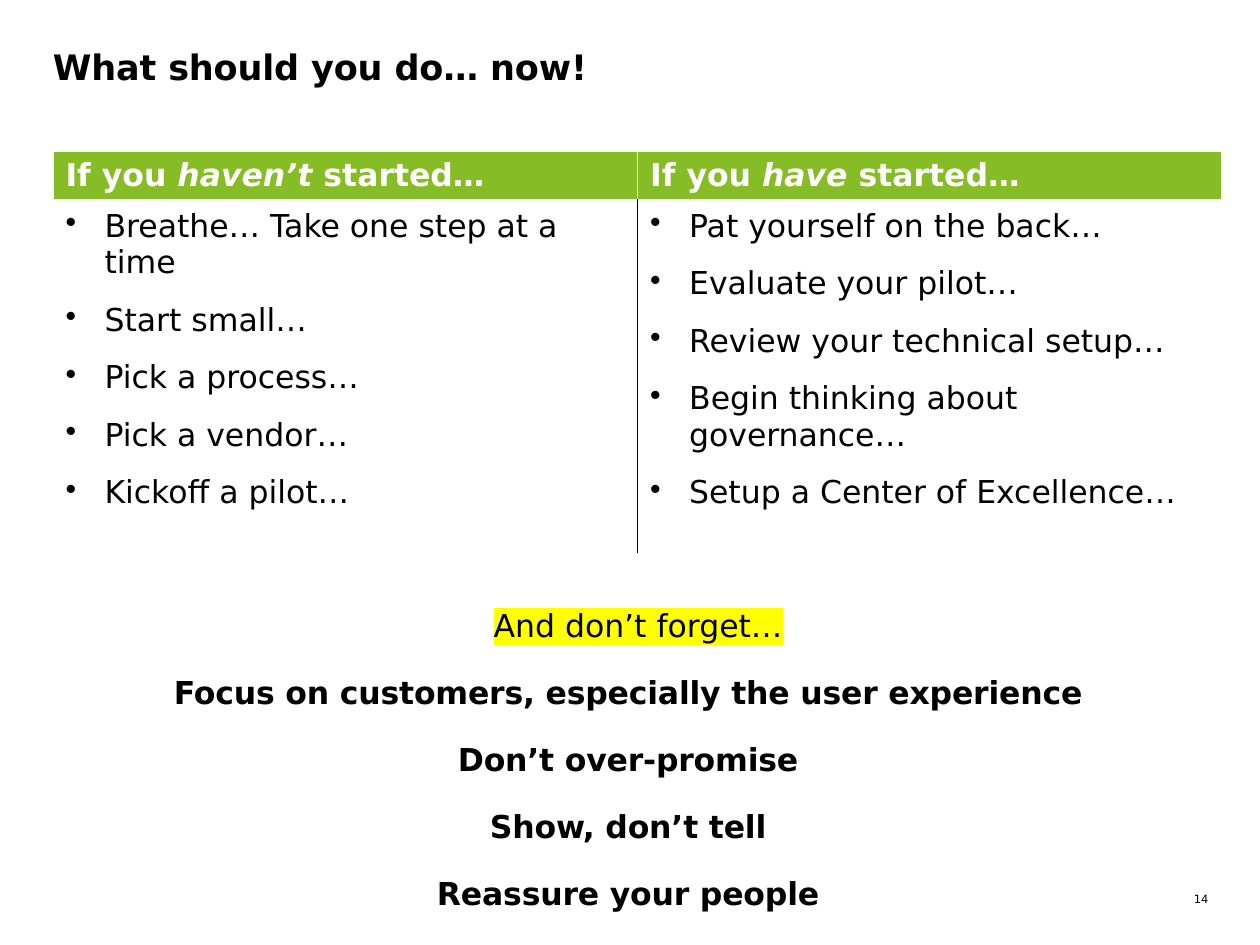
from lxml import etree
from pptx import Presentation
from pptx.dml.color import RGBColor
from pptx.enum.text import PP_ALIGN
from pptx.oxml.ns import qn
from pptx.util import Inches, Pt

CENTER = PP_ALIGN.CENTER
RIGHT = PP_ALIGN.RIGHT
FONT = "DejaVu Sans"
BLANK_LAYOUT = 6
COLORS = {"text": "000000", "white": "FFFFFF", "green": "86BC25", "marker": "FFFF00"}

HEADERS = [
    [("If you ", False), ("haven’t ", True), ("started…", False)],
    [("If you ", False), ("have", True), (" started…", False)],
]
STEPS = [
    ["Breathe… Take one step at a time", "Start small…", "Pick a process…",
     "Pick a vendor…", "Kickoff a pilot…"],
    ["Pat yourself on the back…", "Evaluate your pilot…", "Review your technical setup…",
     "Begin thinking about governance…", "Setup a Center of Excellence…"],
]
REMINDERS = ["Focus on customers, especially the user experience", "Don’t over-promise",
             "Show, don’t tell", "Reassure your people"]


def add_span(para, text, size, color="text", bold=False, italic=False, spacing=0):
    """Add one formatted run to a paragraph; spacing is in hundredths of a point."""
    span = para.add_run()
    span.text = text
    font = span.font
    font.name, font.size, font.bold, font.italic = FONT, Pt(size), bold, italic
    font.color.rgb = RGBColor.from_string(COLORS[color])
    if spacing:
        span._r.get_or_add_rPr().set("spc", str(spacing))
    return span


def add_color(parent, color):
    """Add an sRGB colour element to an XML parent."""
    etree.SubElement(parent, qn("a:srgbClr"), val=COLORS[color])


def highlight(span, color):
    """Put a highlight colour behind a run."""
    mark = etree.Element(qn("a:highlight"))
    add_color(mark, color)
    span._r.get_or_add_rPr().find(qn("a:latin")).addprevious(mark)


def add_bullet(para, indent):
    """Give a paragraph a round bullet with a hanging indent."""
    properties = para._p.get_or_add_pPr()
    properties.set("marL", str(indent))
    properties.set("indent", str(-indent))
    etree.SubElement(properties, qn("a:buChar"), char="•")


def style_cell(cell, fill, borders):
    """Fill a cell and set its borders from a dict of side to (colour, points)."""
    cell.fill.solid()
    cell.fill.fore_color.rgb = RGBColor.from_string(COLORS[fill])
    properties = cell._tc.get_or_add_tcPr()
    for position, side in enumerate("LRTB"):
        color, points = borders.get(side, ("white", 1))
        line = etree.Element(qn(f"a:ln{side}"), w=str(Pt(points)))
        add_color(etree.SubElement(line, qn("a:solidFill")), color)
        properties.insert(position, line)


def add_text_frame(page, left, top, width, height):
    """Add a wrapping text box without margins and return its text frame."""
    frame = page.shapes.add_textbox(left, top, width, height).text_frame
    frame.word_wrap = True
    frame.margin_left = frame.margin_top = frame.margin_right = frame.margin_bottom = 0
    return frame


def add_title(page, left, top, width, height):
    """Place the slide title."""
    para = add_text_frame(page, left, top, width, height).paragraphs[0]
    add_span(para, "What should you do… now!", 20, bold=True, spacing=-10)


def add_step_table(page, left, top, width, height):
    """Place the two-column table of next steps."""
    table = page.shapes.add_table(2, 2, left, top, width, height).table
    table.first_row = table.horz_banding = False
    table.rows[0].height = Inches(0.37)
    table.rows[1].height = height - Inches(0.37)
    for column, (header, steps) in enumerate(zip(HEADERS, STEPS)):
        table.columns[column].width = width // 2
        title_cell, body_cell = table.cell(0, column), table.cell(1, column)
        style_cell(title_cell, "green", {"B": ("white", 3)})
        for text, italic in header:
            add_span(title_cell.text_frame.paragraphs[0], text, 18, "white", True, italic)
        style_cell(body_cell, "white", {"RL"[column]: ("text", 1)})
        frame = body_cell.text_frame
        for index, step in enumerate(steps):
            para = frame.add_paragraph() if index else frame.paragraphs[0]
            para.space_after = Pt(12)
            add_bullet(para, Inches(0.31))
            add_span(para, step, 18)


def add_reminders(page, left, top, width, height):
    """Place the centred closing reminders under a highlighted lead."""
    frame = add_text_frame(page, left, top, width, height)
    lead = frame.paragraphs[0]
    lead.alignment = CENTER
    lead.space_after = Pt(12)
    highlight(add_span(lead, "And don’t forget…", 18), "marker")
    for reminder in REMINDERS:
        para = frame.add_paragraph()
        para.alignment = CENTER
        para.line_spacing = 1.17
        para.space_before, para.space_after = Pt(1), Pt(12)
        para._p.get_or_add_pPr().set("marR", str(Inches(0.16)))
        add_span(para, reminder, 18, bold=True, spacing=-10)


def add_page_number(page, left, top, width, height):
    """Place the page number."""
    para = add_text_frame(page, left, top, width, height).paragraphs[0]
    para.alignment = RIGHT
    add_span(para, "14", 6.5)


def main():
    """Build the deck and save it."""
    deck = Presentation()
    deck.slide_width, deck.slide_height = Inches(10), Inches(7.5)
    page = deck.slides.add_slide(deck.slide_layouts[BLANK_LAYOUT])
    add_page_number(page, Inches(9.34), Inches(7.08), Inches(0.25), Inches(0.11))
    add_title(page, Inches(0.42), Inches(0.36), Inches(9.15), Inches(0.37))
    add_step_table(page, Inches(0.42), Inches(1.2), Inches(9.28), Inches(3.15))
    add_reminders(page, Inches(0.56), Inches(4.81), Inches(9.01), Inches(2.9))
    deck.save("out.pptx")


if __name__ == "__main__":
    main()
